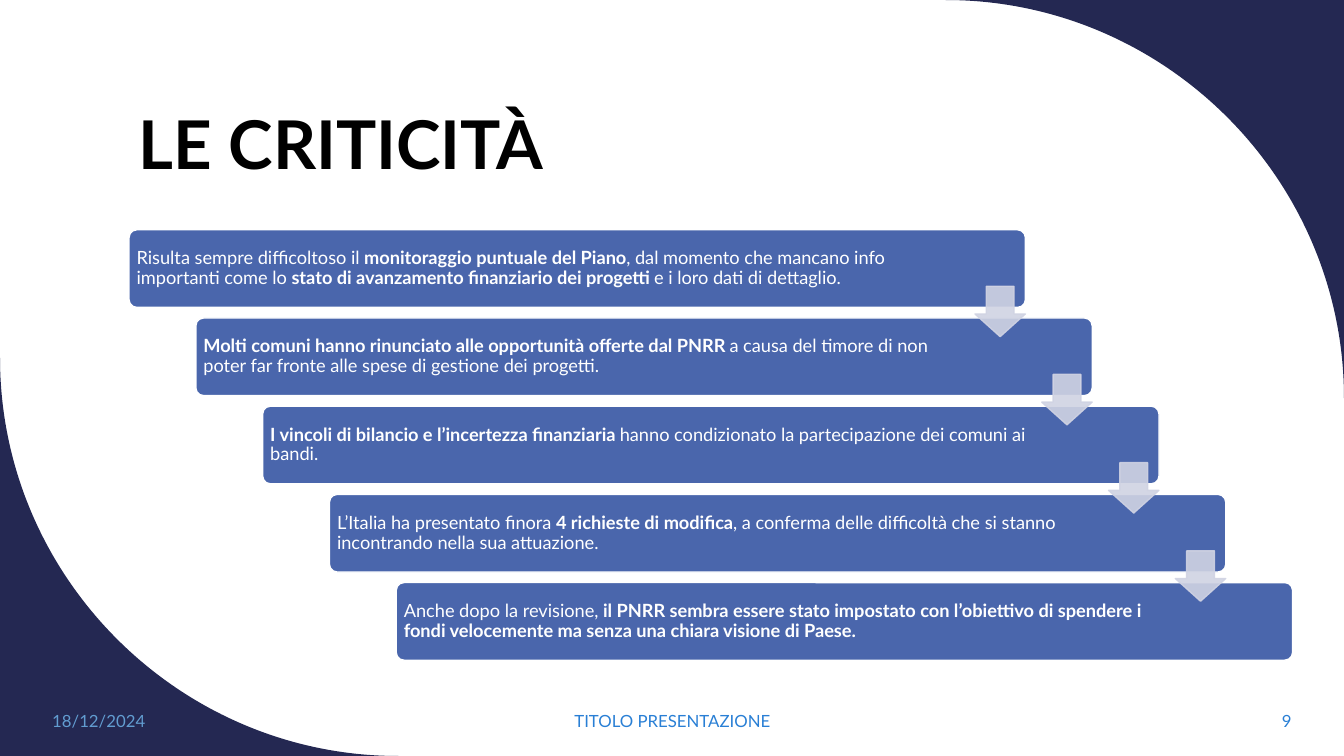
"""Build the slide "LE CRITICITÀ" with a staircase of five issues."""
from dataclasses import dataclass

from lxml import etree
from pptx import Presentation, slide, util as u
from pptx.dml import color
from pptx.enum import shapes, text
from pptx.oxml import ns
from pptx.shapes import autoshape
from pptx.text import text as txt

NAVY = color.RGBColor(0x24, 0x28, 0x52)
BLUE = color.RGBColor(0x4A, 0x66, 0xAC)
SKY = color.RGBColor(0x62, 0x9D, 0xD1)
AZURE = color.RGBColor(0x29, 0x7F, 0xD5)
PALE = color.RGBColor(0xD0, 0xD3, 0xE3)
WHITE = color.RGBColor(0xFF, 0xFF, 0xFF)
BLACK = color.RGBColor(0, 0, 0)
FONT = "Lato"
RADIUS = 3.95
CURVE_PULL = 0.55
STEP_X, STEP_Y = 0.6625, 0.875
TEXT_OFFSET = 0.025


@dataclass(frozen=True)
class Run:
    text: str
    bold: bool = False


@dataclass(frozen=True)
class Box:
    left: float
    top: float
    width: float
    height: float

    def shifted(self, step: int) -> "Box":
        return Box(self.left + step * STEP_X, self.top + step * STEP_Y,
                   self.width, self.height)

    def lengths(self) -> tuple[u.Length, ...]:
        return tuple(u.Inches(v) for v in (self.left, self.top, self.width, self.height))


@dataclass(frozen=True)
class Style:
    size: float
    color: color.RGBColor
    align: text.PP_ALIGN = text.PP_ALIGN.LEFT
    anchor: text.MSO_ANCHOR = text.MSO_ANCHOR.MIDDLE
    spacing: float = 1.0
    after: float = 0
    inset_x: float = 0.1


@dataclass(frozen=True)
class Corner:
    x: float
    y: float
    direction: int

    def outline(self) -> list[tuple[u.Length, u.Length]]:
        reach = self.direction * RADIUS
        pull = reach * (1 - CURVE_PULL)
        points = [(self.x - reach, self.y), (self.x - pull, self.y),
                  (self.x, self.y + pull), (self.x, self.y + reach), (self.x, self.y)]
        return [(u.Inches(x), u.Inches(y)) for x, y in points]


@dataclass(frozen=True)
class Label:
    box: Box
    run: Run
    style: Style


BAR = Box(1.28, 2.28, 8.89, 0.77)
ARROW = Box(9.67, 2.84, 0.5, 0.5)
BAR_STYLE = Style(13, WHITE, spacing=0.9, after=4.5, inset_x=0.05)
CORNERS = [Corner(13.33, 0, 1), Corner(0, 7.5, -1)]
LABELS = [
    Label(Box(1.28, 0.42, 10.69, 1.45), Run("LE CRITICITÀ", True),
          Style(48, BLACK, anchor=text.MSO_ANCHOR.BOTTOM, spacing=0.9)),
    Label(Box(0.42, 6.95, 1.86, 0.4), Run("18/12/2024"), Style(12, SKY, after=6)),
    Label(Box(4.42, 6.95, 4.5, 0.4), Run("TITOLO PRESENTAZIONE"),
          Style(12, AZURE, text.PP_ALIGN.CENTER, after=6)),
    Label(Box(11.1, 6.95, 1.81, 0.4), Run("9"),
          Style(12, AZURE, text.PP_ALIGN.RIGHT, after=6)),
]
ISSUES = [
    [Run("Risulta sempre difficoltoso il "),
     Run("monitoraggio puntuale del Piano", True),
     Run(", dal momento che mancano info importanti come lo "),
     Run("stato di avanzamento finanziario dei progetti ", True),
     Run("e i loro dati di dettaglio.")],
    [Run("Molti comuni hanno rinunciato alle opportunità offerte dal PNRR ", True),
     Run("a causa del timore di non poter far fronte alle spese di gestione dei progetti.")],
    [Run("I vincoli di bilancio e l’incertezza finanziaria ", True),
     Run("hanno condizionato la partecipazione dei comuni ai bandi.")],
    [Run("L’Italia ha presentato finora "),
     Run("4 richieste di modifica", True),
     Run(", a conferma delle difficoltà che si stanno incontrando nella sua attuazione.")],
    [Run("Anche dopo la revisione, "),
     Run("il PNRR sembra essere stato impostato con l’obiettivo di spendere i fondi "
         "velocemente ma senza una chiara visione di Paese.", True)],
]


def add_corner(s: slide.Slide, corner: Corner) -> None:
    start, *rest = corner.outline()
    builder = s.shapes.build_freeform(*start)
    builder.add_line_segments(rest, close=True)
    sp = builder.convert_to_shape()
    sp.shadow.inherit = False
    sp.fill.solid()
    sp.fill.fore_color.rgb = NAVY
    sp.line.fill.background()
    lines = list(sp._element.spPr.iter(ns.qn("a:lnTo")))[:3]
    curve = etree.Element(ns.qn("a:cubicBezTo"))
    lines[0].addprevious(curve)
    for line in lines:
        curve.append(line[0])
        line.getparent().remove(line)


def add_run(p: txt._Paragraph, run: Run, style: Style) -> None:
    r = p.add_run()
    r.text = run.text
    r.font.name = FONT
    r.font.size = u.Pt(style.size)
    r.font.bold = run.bold
    r.font.color.rgb = style.color


def add_text(s: slide.Slide, box: Box, runs: list[Run], style: Style) -> None:
    tf = s.shapes.add_textbox(*box.lengths()).text_frame
    tf.word_wrap = True
    tf.vertical_anchor = style.anchor
    tf.margin_left = tf.margin_right = u.Inches(style.inset_x)
    tf.margin_top = tf.margin_bottom = u.Inches(0.05)
    p = tf.paragraphs[0]
    p.alignment = style.align
    p.line_spacing = style.spacing
    p.space_after = u.Pt(style.after)
    for run in runs:
        add_run(p, run, style)


def add_preset(s: slide.Slide, kind: shapes.MSO_SHAPE, box: Box, adjustments: list[float],
               fill: color.RGBColor, line: color.RGBColor) -> autoshape.Shape:
    sp = s.shapes.add_shape(kind, *box.lengths())
    sp.shadow.inherit = False
    for i, value in enumerate(adjustments):
        sp.adjustments[i] = value
    sp.fill.solid()
    sp.fill.fore_color.rgb = fill
    sp.line.color.rgb = line
    sp.line.width = u.Pt(1)
    return sp


def add_issue(s: slide.Slide, step: int, runs: list[Run]) -> None:
    bar = BAR.shifted(step)
    add_preset(s, shapes.MSO_SHAPE.ROUNDED_RECTANGLE, bar, [0.1], BLUE, WHITE)
    width = 7.69 if step else 7.98
    box = Box(bar.left + TEXT_OFFSET, bar.top + TEXT_OFFSET, width, 0.72)
    add_text(s, box, runs, BAR_STYLE)


def add_arrow(s: slide.Slide, step: int) -> None:
    sp = add_preset(s, shapes.MSO_SHAPE.DOWN_ARROW, ARROW.shifted(step), [0.55, 0.45],
                    PALE, PALE)
    for clr in sp._element.spPr.iter(ns.qn("a:srgbClr")):
        etree.SubElement(clr, ns.qn("a:alpha"), val="90000")


def main() -> None:
    prs = Presentation()
    prs.slide_width, prs.slide_height = u.Inches(13.33), u.Inches(7.5)
    s = prs.slides.add_slide(prs.slide_layouts[6])
    for corner in CORNERS:
        add_corner(s, corner)
    for label in LABELS:
        add_text(s, label.box, [label.run], label.style)
    for step, runs in enumerate(ISSUES):
        add_issue(s, step, runs)
    for step in range(len(ISSUES) - 1):
        add_arrow(s, step)
    prs.save("out.pptx")


if __name__ == "__main__":
    main()
